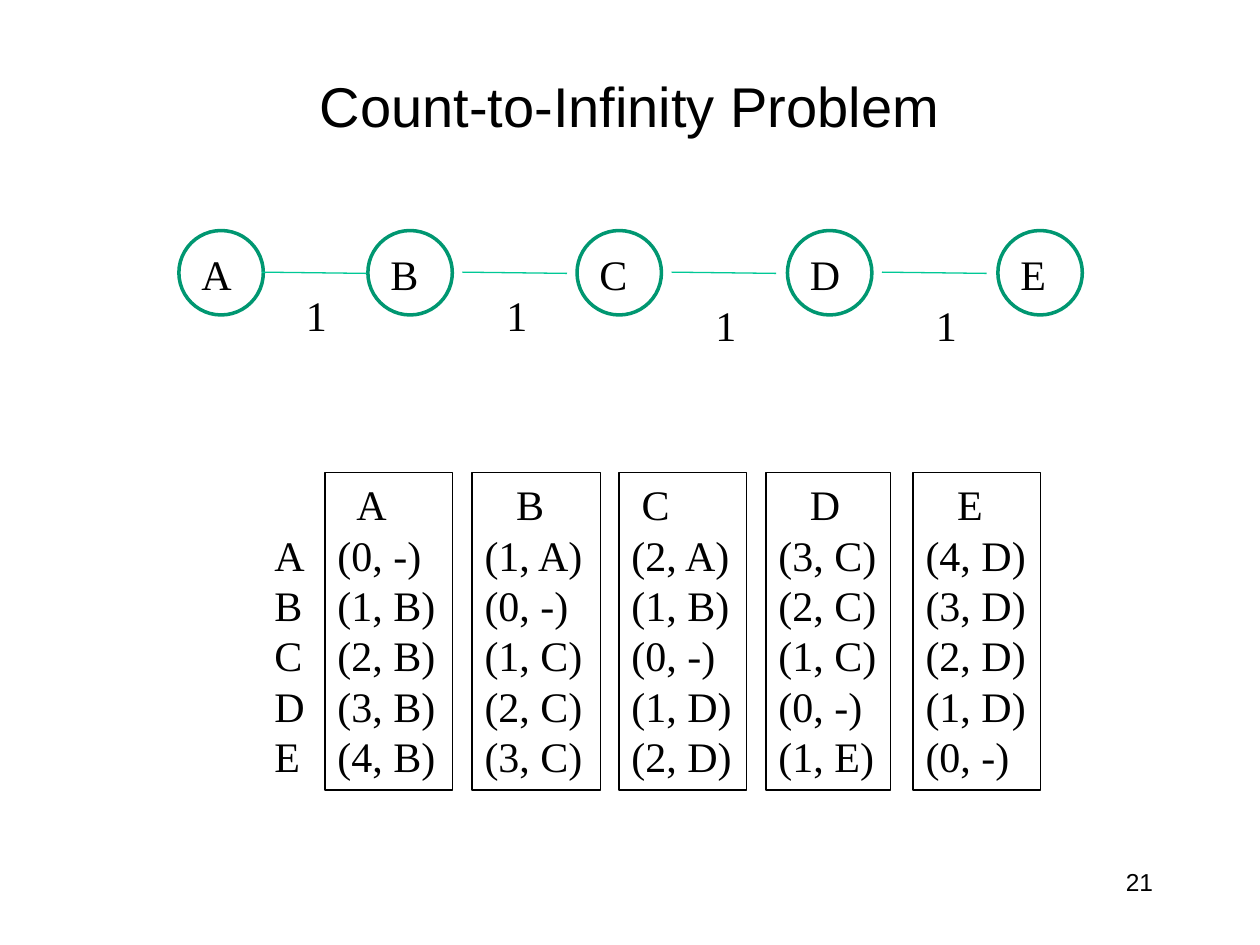
from pptx import Presentation
from pptx.dml.color import RGBColor
from pptx.enum.shapes import MSO_CONNECTOR as Connector, MSO_SHAPE as Shape
from pptx.enum.text import MSO_ANCHOR as Anchor, MSO_AUTO_SIZE as AutoSize, PP_ALIGN as Align
from pptx.oxml import parse_xml
from pptx.oxml.ns import nsdecls, qn
from pptx.util import Inches, Pt

BLACK = RGBColor(0x00, 0x00, 0x00)
NODE_GREEN = RGBColor(0x00, 0x97, 0x71)
LINK_GREEN = RGBColor(0x00, 0xC8, 0x96)

TITLE_FONT = {"name": "Arial", "size": Pt(32)}
NUMBER_FONT = {"name": "Arial", "size": Pt(14)}
BODY_FONT = {"name": "Times New Roman", "size": Pt(24)}
FITTED_FRAME = {
    "word_wrap": False,
    "auto_size": AutoSize.SHAPE_TO_FIT_TEXT,
    "vertical_anchor": Anchor.TOP,
}

NODES = {"A": 1.42, "B": 2.92, "C": 4.58, "D": 6.25, "E": 7.92}
LABEL_WIDTHS = {"A": 0.45, "B": 0.43, "C": 0.43, "D": 0.45, "E": 0.41}
LINK_STARTS = [2.08, 3.67, 5.33, 7]
COST_PLACES = [(2.33, 2.25), (3.92, 2.25), (5.58, 2.33), (7.33, 2.33)]
NODE_SIZE = 0.67
LINK_LENGTH = 0.83
LINK_TOP = 2.16
LINK_DROP = 0.01

TABLE_TOP = 3.75
TABLE_LEFT = 2.58
COLUMN_STEP = 7 / 6
ROW_HEIGHT = 0.4
ROUTES = [
    ("A", 0.15, 1.01, ["(0, -)", "(1, B)", "(2, B)", "(3, B)", "(4, B)"]),
    ("B", 0.25, 1.02, ["(1, A)", "(0, -)", "(1, C)", "(2, C)", "(3, C)"]),
    ("C", 0.08, 1.01, ["(2, A)", "(1, B)", "(0, -)", "(1, D)", "(2, D)"]),
    ("D", 0.25, 0.99, ["(3, C)", "(2, C)", "(1, C)", "(0, -)", "(1, E)"]),
    ("E", 0.25, 1.01, ["(4, D)", "(3, D)", "(2, D)", "(1, D)", "(0, -)"]),
]


def apply_format(target, values):
    for name, value in values.items():
        setattr(target, name, value)


def write_lines(box, lines, font, align=Align.LEFT):
    frame = box.text_frame
    for index, line in enumerate(lines):
        para = frame.paragraphs[0] if index == 0 else frame.add_paragraph()
        para.alignment = align
        span = para.add_run()
        span.text = line
        apply_format(span.font, font)
        span.font.color.rgb = BLACK


def add_text(page, left, top, width, lines):
    height = len(lines) * ROW_HEIGHT + 0.1
    box = page.shapes.add_textbox(*map(Inches, (left, top, width, height)))
    apply_format(box.text_frame, FITTED_FRAME)
    write_lines(box, lines, BODY_FONT)


def add_outline(page, kind, left, top, width, height, color, weight):
    shape = page.shapes.add_shape(kind, *map(Inches, (left, top, width, height)))
    shape.shadow.inherit = False
    shape.fill.background()
    shape.line.color.rgb = color
    shape.line.width = Pt(weight)
    return shape


def add_link(page, left):
    ends = (left, LINK_TOP, left + LINK_LENGTH, LINK_TOP + LINK_DROP)
    link = page.shapes.add_connector(Connector.STRAIGHT, *map(Inches, ends))
    link.line.color.rgb = LINK_GREEN
    link.line.width = Pt(0.75)
    element = link._element
    element.spPr.append(parse_xml(f"<a:effectLst {nsdecls('a')}/>"))
    element.remove(element.find(qn("p:style")))


def add_route_column(page, left, heading, indent, width, routes):
    box = add_outline(page, Shape.RECTANGLE, left, TABLE_TOP, width, 2.52, BLACK, 0.75)
    apply_format(box.text_frame, FITTED_FRAME)
    write_lines(box, [heading, *routes], BODY_FONT)
    properties = box.text_frame.paragraphs[0]._p.get_or_add_pPr()
    properties.set("marL", str(Inches(indent)))
    properties.set("indent", "0")


def add_title(page, text):
    title = page.shapes.title
    places = {"left": 0.75, "top": 0.42, "width": 8.5, "height": 0.83}
    apply_format(title, {name: Inches(value) for name, value in places.items()})
    title.text_frame.vertical_anchor = Anchor.MIDDLE
    write_lines(title, [text], TITLE_FONT, Align.CENTER)


def add_page_number(page, number):
    box = page.shapes.add_textbox(*map(Inches, (7.17, 6.83, 2.08, 0.5)))
    box.text_frame.word_wrap = True
    write_lines(box, [number], NUMBER_FONT, Align.RIGHT)


def add_network(page):
    for left in NODES.values():
        add_outline(page, Shape.OVAL, left, 1.83, NODE_SIZE, NODE_SIZE, NODE_GREEN, 2)
    for left in LINK_STARTS:
        add_link(page, left)
    for name, left in NODES.items():
        add_text(page, left + 0.08, 1.92, LABEL_WIDTHS[name], [name])
    for left, top in COST_PLACES:
        add_text(page, left, top, 0.37, ["1"])


def add_routing_table(page):
    add_text(page, 2.08, TABLE_TOP + ROW_HEIGHT, 0.46, list(NODES))
    for index, column in enumerate(ROUTES):
        add_route_column(page, TABLE_LEFT + index * COLUMN_STEP, *column)


def main():
    deck = Presentation()
    deck.slide_width, deck.slide_height = Inches(10), Inches(7.5)
    page = deck.slides.add_slide(deck.slide_layouts[5])
    add_page_number(page, "21")
    add_title(page, "Count-to-Infinity Problem")
    add_network(page)
    add_routing_table(page)
    deck.save("out.pptx")


if __name__ == "__main__":
    main()
